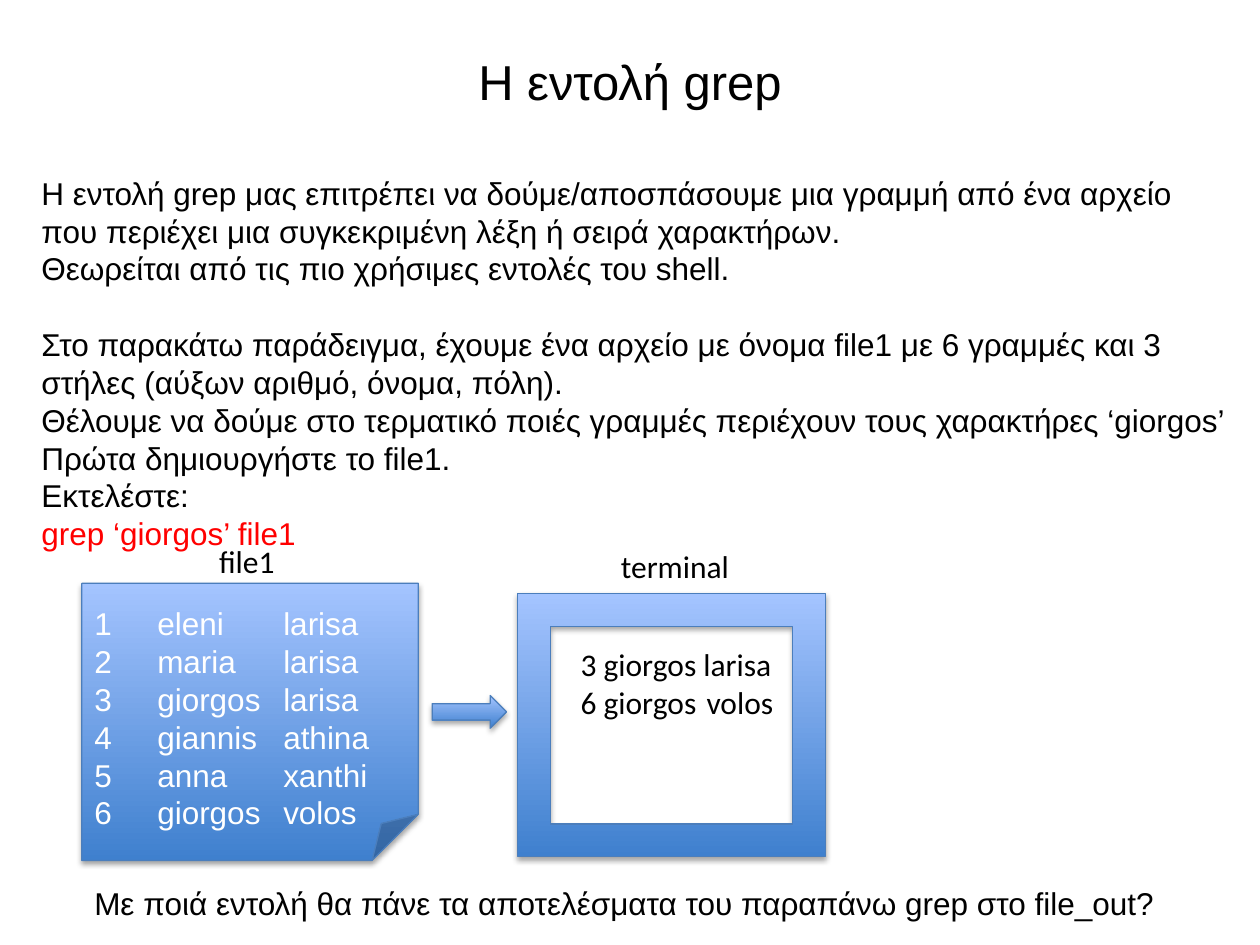
from lxml import etree
from pptx import Presentation
from pptx.dml.color import RGBColor
from pptx.enum.shapes import MSO_SHAPE
from pptx.enum.text import MSO_ANCHOR, PP_ALIGN
from pptx.oxml.ns import qn
from pptx.util import Inches, Pt

LEFT, CENTER = PP_ALIGN.LEFT, PP_ALIGN.CENTER
MIDDLE = MSO_ANCHOR.MIDDLE
FOLDED, ARROW, FRAME = MSO_SHAPE.FOLDED_CORNER, MSO_SHAPE.RIGHT_ARROW, MSO_SHAPE.FRAME

THEME = {
    "sans": "Arial", "label": "Calibri",
    "title_size": 28, "text_size": 18, "section_gap": 21.7,
    "ink": "000000", "command": "FF0000", "on_fill": "FFFFFF",
    "fill_bottom": "3F80CE", "fill_top": "A4C4FF", "outline": "4B7EBC",
}

TITLE = "Η εντολή grep"
INTRO = [
    "Η εντολή grep μας επιτρέπει να δούμε/αποσπάσουμε μια γραμμή από ένα αρχείο "
    "που περιέχει μια συγκεκριμένη λέξη ή σειρά χαρακτήρων.",
    "Θεωρείται από τις πιο χρήσιμες εντολές του shell.",
]
EXAMPLE = [
    "Στο παρακάτω παράδειγμα, έχουμε ένα αρχείο με όνομα file1 με 6 γραμμές και 3 "
    "στήλες (αύξων αριθμό, όνομα, πόλη).",
    "Θέλουμε να δούμε στο τερματικό ποιές γραμμές περιέχουν τους χαρακτήρες ‘giorgos’",
    "Πρώτα δημιουργήστε το file1.",
    "Εκτελέστε:",
]
COMMAND = "grep ‘giorgos’ file1"
FILE_ROWS = [
    ("1", "eleni", "larisa"),
    ("2", "maria", "larisa"),
    ("3", "giorgos", "larisa"),
    ("4", "giannis", "athina"),
    ("5", "anna", "xanthi"),
    ("6", "giorgos", "volos"),
]
LABELS = [
    (["file1"], (1.64, 4.25, 0.65, 0.4)),
    (["terminal"], (4.83, 4.29, 1.07, 0.4)),
    (["3 giorgos larisa", "6 giorgos\tvolos"], (4.51, 5.07, 1.74, 0.71)),
]
QUESTION = "Με ποιά εντολή θα πάνε τα αποτελέσματα του παραπάνω grep στο file_out?"


def color(name):
    return RGBColor.from_string(THEME[name])


def write(frame, lines, font="sans", ink="ink", size="text_size", align=LEFT):
    frame.text = "\n".join(lines)
    for paragraph in frame.paragraphs:
        paragraph.alignment = align
        paragraph.font.name = THEME[font]
        paragraph.font.size = Pt(THEME[size])
        paragraph.font.color.rgb = color(ink)


def add_text(slide, lines, box, font="sans", wrap=True):
    frame = slide.shapes.add_textbox(*map(Inches, box)).text_frame
    frame.word_wrap = wrap
    write(frame, lines, font)
    return frame


def add_glossy(slide, preset, box):
    shape = slide.shapes.add_shape(preset, *map(Inches, box))
    shape.fill.gradient()
    shape.fill.gradient_angle = 90
    for stop, name in zip(shape.fill.gradient_stops, ("fill_bottom", "fill_top")):
        stop.color.rgb = color(name)
    shape.line.color.rgb = color("outline")
    shape.line.width = Pt(0.75)
    shape.shadow.inherit = False
    effects = shape._element.spPr.find(qn("a:effectLst"))
    shadow = etree.SubElement(
        effects, qn("a:outerShdw"), blurRad=str(Pt(3.1)), dist=str(Pt(1.8)),
        dir="5400000", rotWithShape="0")
    tint = etree.SubElement(shadow, qn("a:srgbClr"), val=THEME["ink"])
    etree.SubElement(tint, qn("a:alpha"), val="35000")
    return shape


def main():
    """Build the slide that explains the grep command."""
    deck = Presentation()
    deck.slide_width, deck.slide_height = Inches(10), Inches(7.5)
    slide = deck.slides.add_slide(deck.slide_layouts[5])

    title = slide.shapes.title
    title.left, title.top, title.width, title.height = map(Inches, (0.5, 0.3, 9, 0.68))
    title.text_frame.vertical_anchor = MIDDLE
    write(title.text_frame, [TITLE], size="title_size", align=CENTER)

    explanation = add_text(slide, INTRO + EXAMPLE + [COMMAND], (0.23, 1.33, 9.61, 3.13))
    explanation.paragraphs[len(INTRO)].space_before = Pt(THEME["section_gap"])
    explanation.paragraphs[-1].font.color.rgb = color("command")

    file_text = add_glossy(slide, FOLDED, (0.65, 4.63, 2.67, 2.2)).text_frame
    file_text.vertical_anchor = MIDDLE
    file_text.margin_top = Inches(0.35)
    write(file_text, ["\t".join(row) for row in FILE_ROWS], ink="on_fill")

    add_glossy(slide, ARROW, (3.43, 5.52, 0.59, 0.26))
    add_glossy(slide, FRAME, (4.11, 4.71, 2.44, 2.09))
    for lines, box in LABELS:
        add_text(slide, lines, box, font="label", wrap=False)
    add_text(slide, [QUESTION], (0.65, 6.97, 9.18, 0.4))

    deck.save("out.pptx")


if __name__ == "__main__":
    main()
